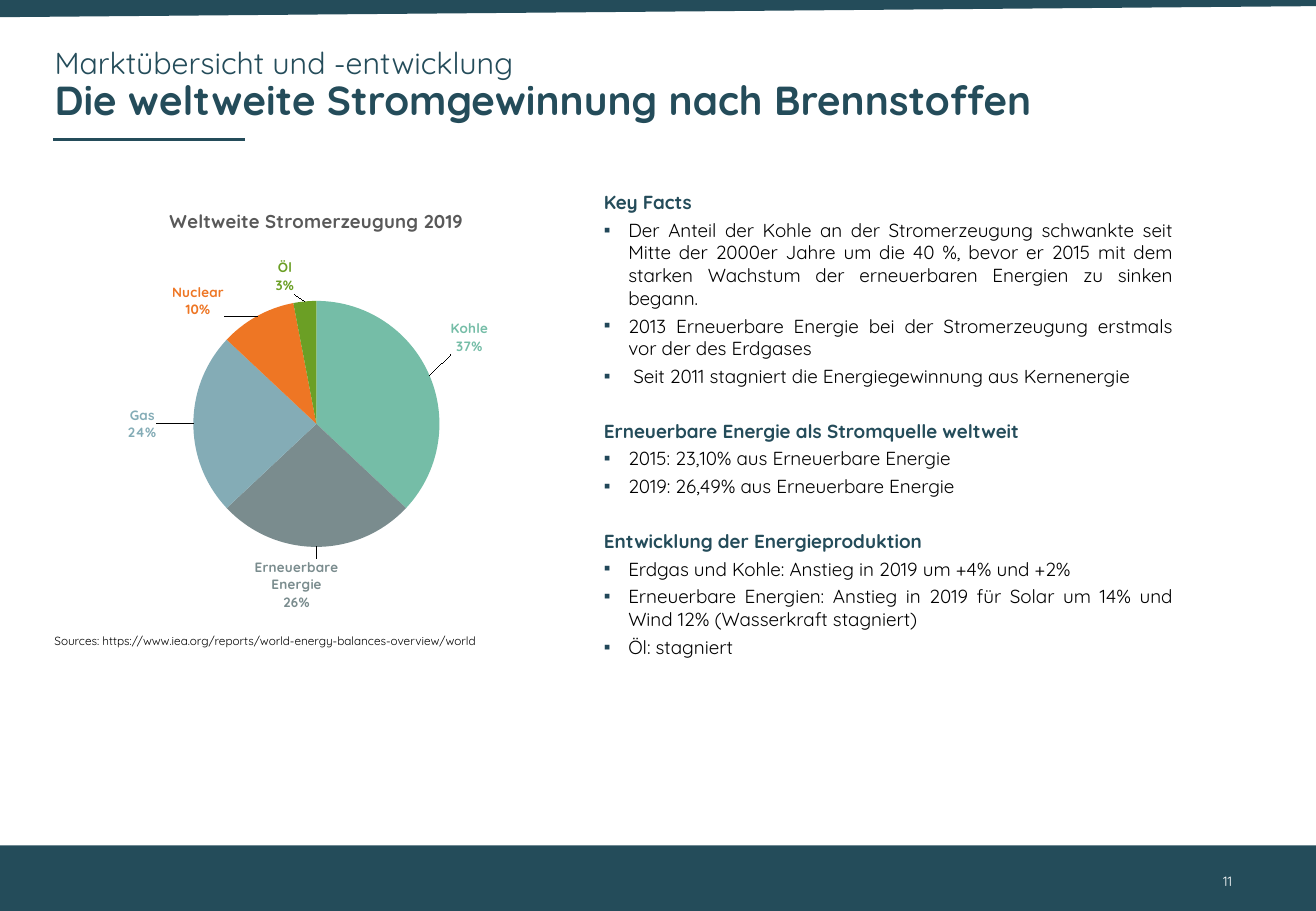
import dataclasses
import lxml.etree
import pptx
import pptx.chart.data
import pptx.dml.color
import pptx.enum.chart
import pptx.enum.shapes
import pptx.enum.text
import pptx.oxml
import pptx.oxml.ns
import pptx.util

Cm = pptx.util.Cm
Pt = pptx.util.Pt
qn = pptx.oxml.ns.qn


@dataclasses.dataclass(frozen=True)
class Theme:
    """Colours, font and type sizes of the slide."""
    font: str = "Quicksand"
    dark: str = "244C5A"
    mark: str = "214759"
    grey: str = "595959"
    black: str = "000000"
    white: str = "FFFFFF"
    kicker: float = 18
    head: float = 24
    body: float = 11.2
    chart: float = 11
    label: float = 8
    small: float = 7


THEME = Theme()
WIDE, HIGH = 27.51, 19.05

FUELS = [
    ("Kohle", 37, "75BDA7", 0.03, -0.04),
    ("Erneuerbare Energie", 26, "7A8C8E", -0.04, 0.01),
    ("Gas", 24, "84ACB6", -0.06, 0),
    ("Nuclear", 10, "EE7624", -0.06, 0.02),
    ("Öl", 3, "6B9F25", -0.02, 0),
    ("Andere", 0, "9F6715", 0.09, -0.04),
]

FACTS = {
    "Key Facts": [
        "Der Anteil der Kohle an der Stromerzeugung schwankte seit Mitte der 2000er Jahre "
        "um die 40 %, bevor er 2015 mit dem starken Wachstum der erneuerbaren Energien "
        "zu sinken begann.",
        "2013 Erneuerbare Energie bei der Stromerzeugung erstmals vor der des Erdgases",
        " Seit 2011 stagniert die Energiegewinnung aus Kernenergie",
    ],
    "Erneuerbare Energie als Stromquelle weltweit": [
        "2015: 23,10% aus Erneuerbare Energie",
        "2019: 26,49% aus Erneuerbare Energie",
    ],
    "Entwicklung der Energieproduktion": [
        "Erdgas und Kohle: Anstieg in 2019 um +4% und +2%",
        "Erneuerbare Energien: Anstieg in 2019 für Solar um 14% und Wind 12% "
        "(Wasserkraft stagniert)",
        "Öl: stagniert",
    ],
}


def rgb(code):
    """Turn a hex code into a colour."""
    return pptx.dml.color.RGBColor.from_string(code)


def style(font, size, color, bold=False):
    """Set face, size, colour and weight of a font."""
    font.name, font.size, font.bold = THEME.font, Pt(size), bold
    font.color.rgb = rgb(color)


def place(shape, box):
    """Move a shape to a box given in centimetres."""
    shape.left, shape.top, shape.width, shape.height = map(Cm, box)


def bare(frame):
    """Wrap a text frame and drop its margins."""
    frame.word_wrap = True
    frame.margin_left = frame.margin_right = 0
    frame.margin_top = frame.margin_bottom = 0


def paint(shape):
    """Fill a shape with the dark colour, without line or shadow."""
    shape.shadow.inherit = False
    shape.fill.solid()
    shape.fill.fore_color.rgb = rgb(THEME.dark)
    shape.line.fill.background()


def add_band(slide, box):
    """Draw the sloped band at the top."""
    left, top, width, height = box
    pen = slide.shapes.build_freeform(Cm(left), Cm(top))
    pen.add_line_segments([
        (Cm(left + width), Cm(top)),
        (Cm(left + width), Cm(top + 0.36 * height)),
        (Cm(left), Cm(top + height)),
    ])
    paint(pen.convert_to_shape())


def add_foot(slide, box, page):
    """Draw the bottom bar with the page number."""
    left, top, width, height = box
    bar = slide.shapes.add_shape(pptx.enum.shapes.MSO_SHAPE.RECTANGLE, *map(Cm, box))
    paint(bar)
    note = slide.shapes.add_textbox(
        Cm(left + width - 2.54), Cm(top + 0.23), Cm(1.04), Cm(1.02))
    frame = note.text_frame
    frame.word_wrap = True
    frame.vertical_anchor = pptx.enum.text.MSO_ANCHOR.MIDDLE
    frame.text = page
    line = frame.paragraphs[0]
    line.alignment = pptx.enum.text.PP_ALIGN.RIGHT
    style(line.runs[0].font, THEME.label, THEME.white)


def add_head(slide, box):
    """Fill the title and rule it off below."""
    left, top = box[:2]
    title = slide.shapes.title
    place(title, box)
    frame = title.text_frame
    bare(frame)
    frame.vertical_anchor = pptx.enum.text.MSO_ANCHOR.TOP
    frame.text = "Marktübersicht und -entwicklung\vDie weltweite Stromgewinnung nach Brennstoffen"
    line = frame.paragraphs[0]
    line.alignment = pptx.enum.text.PP_ALIGN.LEFT
    line.line_spacing = 0.9
    style(line.runs[0].font, THEME.kicker, THEME.dark)
    style(line.runs[1].font, THEME.head, THEME.dark, True)
    rule = slide.shapes.add_connector(
        pptx.enum.shapes.MSO_CONNECTOR.STRAIGHT,
        Cm(left - 0.03), Cm(top + 1.92), Cm(left + 3.99), Cm(top + 1.92))
    rule.line.color.rgb = rgb(THEME.dark)
    rule.line.width = Pt(1.5)
    lxml.etree.SubElement(rule._element.spPr, qn("a:effectLst"))


def set_mark(line, bullet):
    """Give a paragraph a square bullet, or none."""
    props = line._p.get_or_add_pPr()
    indent = Cm(0.51) if bullet else 0
    props.set("marL", str(indent))
    props.set("indent", str(-indent))
    if bullet:
        color = lxml.etree.SubElement(props, qn("a:buClr"))
        lxml.etree.SubElement(color, qn("a:srgbClr")).set("val", THEME.mark)
        lxml.etree.SubElement(props, qn("a:buChar")).set("char", "▪")
    else:
        lxml.etree.SubElement(props, qn("a:buNone"))


def add_facts(slide, box):
    """Fill the body with headed lists."""
    body = slide.placeholders[1]
    place(body, box)
    frame = body.text_frame
    frame.word_wrap = True
    rows = [(text, text == head) for head, items in FACTS.items() for text in [head, *items]]
    frame.text = "\n".join(text for text, _ in rows)
    for i, (line, (_, head)) in enumerate(zip(frame.paragraphs, rows)):
        set_mark(line, not head)
        line.alignment = pptx.enum.text.PP_ALIGN.JUSTIFY
        line.space_before = Pt(0 if i == 0 else 19 if head else 3)
        style(line.runs[0].font, THEME.body, THEME.dark if head else THEME.black, head)


def add_layout(parent, spot, **values):
    """Insert a manual chart layout at a child position."""
    layout = lxml.etree.Element(qn("c:layout"))
    manual = lxml.etree.SubElement(layout, qn("c:manualLayout"))
    for name, value in values.items():
        lxml.etree.SubElement(manual, qn("c:" + name)).set("val", str(value))
    for old in parent.findall(qn("c:layout")):
        parent.remove(old)
    parent.insert(spot, layout)


def set_show(labels):
    """Show category and percent on separate lines."""
    for name, on in (("showVal", 0), ("showCatName", 1), ("showPercent", 1)):
        labels.find(qn("c:" + name)).set("val", str(on))
    split = lxml.etree.Element(qn("c:separator"))
    split.text = "\n"
    labels.find(qn("c:showBubbleSize")).addnext(split)


def add_pie(slide, box):
    """Add the pie chart with coloured outside labels."""
    data = pptx.chart.data.CategoryChartData()
    data.categories = [fuel[0] for fuel in FUELS]
    data.add_series("Series 1", [fuel[1] for fuel in FUELS])
    chart = slide.shapes.add_chart(
        pptx.enum.chart.XL_CHART_TYPE.PIE, *map(Cm, box), data).chart
    style(chart.font, 10, THEME.black)
    chart.has_legend = False
    chart.has_title = True
    title = chart.chart_title.text_frame
    title.text = "Weltweite Stromerzeugung 2019"
    style(title.paragraphs[0].runs[0].font, THEME.chart, THEME.grey, True)
    plot = chart.plots[0]
    plot.vary_by_categories = True
    add_layout(plot._element.getparent(), 0, layoutTarget="inner", xMode="edge",
               yMode="edge", x=0.25, y=0.26, w=0.5, h=0.57)
    series = plot.series[0]
    labels = series.data_labels
    labels.number_format = "0%"
    labels.number_format_is_linked = False
    style(labels.font, THEME.label, FUELS[0][2], True)
    set_show(labels._element)
    for i, (_, _, color, x, y) in enumerate(FUELS):
        point = series.points[i]
        point.format.fill.solid()
        point.format.fill.fore_color.rgb = rgb(color)
        point.data_label.position = pptx.enum.chart.XL_LABEL_POSITION.OUTSIDE_END
        style(point.data_label.font, THEME.label, color, True)
        label = labels._element.findall(qn("c:dLbl"))[i]
        add_layout(label, 1, x=x, y=y)
        set_show(label)


def add_source(slide, box):
    """Write the source line."""
    frame = slide.shapes.add_textbox(*map(Cm, box)).text_frame
    bare(frame)
    frame.text = "Sources: https://www.iea.org/reports/world-energy-balances-overview/world"
    style(frame.paragraphs[0].runs[0].font, THEME.small, THEME.black)


def main():
    """Build and save the slide."""
    deck = pptx.Presentation()
    deck.slide_width, deck.slide_height = Cm(WIDE), Cm(HIGH)
    slide = deck.slides.add_slide(deck.slide_layouts[1])
    add_band(slide, (0, 0, WIDE, 0.36))
    add_foot(slide, (0, 17.68, WIDE, 1.37), "11")
    add_head(slide, (1.14, 1, 24.87, 2.54))
    add_source(slide, (1.14, 13.26, 9.35, 0.3))
    add_facts(slide, (12.37, 3.86, 12.4, 11.66))
    add_pie(slide, (1.47, 3.94, 10.29, 9.04))
    deck.save("out.pptx")


if __name__ == "__main__":
    main()
